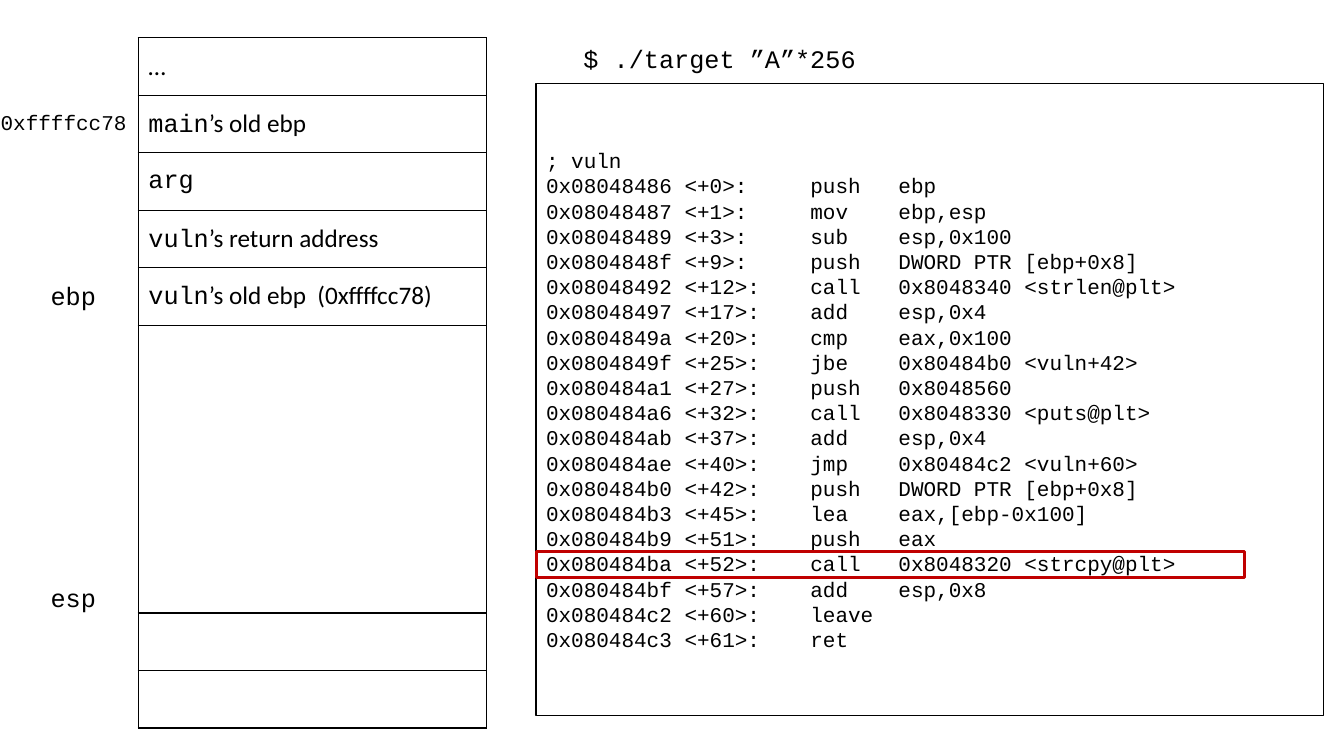
from lxml import etree
from pptx import Presentation
from pptx.dml.color import RGBColor
from pptx.enum import shapes, text
from pptx.oxml.ns import qn
from pptx.util import Pt

MONO, SANS = "Courier New", "Calibri"
BLACK, WHITE, RED = "000000", "FFFFFF", "C00000"
ROW = 41.1
START = 0x08048486
CODE = [
    (0, "push", "ebp"),
    (1, "mov", "ebp,esp"),
    (3, "sub", "esp,0x100"),
    (9, "push", "DWORD PTR [ebp+0x8]"),
    (12, "call", "0x8048340 <strlen@plt>"),
    (17, "add", "esp,0x4"),
    (20, "cmp", "eax,0x100"),
    (25, "jbe", "0x80484b0 <vuln+42>"),
    (27, "push", "0x8048560"),
    (32, "call", "0x8048330 <puts@plt>"),
    (37, "add", "esp,0x4"),
    (40, "jmp", "0x80484c2 <vuln+60>"),
    (42, "push", "DWORD PTR [ebp+0x8]"),
    (45, "lea", "eax,[ebp-0x100]"),
    (51, "push", "eax"),
    (52, "call", "0x8048320 <strcpy@plt>"),
    (57, "add", "esp,0x8"),
    (60, "leave", ""),
    (61, "ret", ""),
]
STACK = [
    (1, [("…", SANS)]),
    (1, [("main", MONO), ("’s old ebp", SANS)]),
    (1, [("arg", MONO)]),
    (1, [("vuln", MONO), ("’s return address", SANS)]),
    (1, [("vuln", MONO), ("’s old ebp  (0xffffcc78)", SANS)]),
    (5, []),
    (1, []),
    (1, []),
]


def color(code):
    return RGBColor.from_string(code)


def style(run, size, face=MONO):
    run.font.size = Pt(size)
    run.font.name = face
    run.font.color.rgb = color(BLACK)


def box(slide, area, line, width, fill=None):
    rect = slide.shapes.add_shape(shapes.MSO_SHAPE.RECTANGLE, *map(Pt, area))
    rect.shadow.inherit = False
    if fill:
        rect.fill.solid()
        rect.fill.fore_color.rgb = color(fill)
    else:
        rect.fill.background()
    rect.line.color.rgb = color(line)
    rect.line.width = Pt(width)
    return rect


def listing(slide, area):
    frame = box(slide, area, BLACK, 1, WHITE).text_frame
    frame.word_wrap = True
    frame.vertical_anchor = text.MSO_ANCHOR.MIDDLE
    lines = ["; vuln"]
    for step, verb, args in CODE:
        place = f"0x{START + step:08x} <+{step}>:"
        lines.append(f"{place:<21}{verb:<7}{args}".rstrip())
    frame.text = "\n".join(lines)
    for para in frame.paragraphs:
        para.alignment = text.PP_ALIGN.LEFT
        style(para.runs[0], 15)


def border(cell):
    props = cell._tc.get_or_add_tcPr()
    for spot, side in enumerate(("lnL", "lnR", "lnT", "lnB")):
        line = etree.Element(qn(f"a:{side}"), w=str(Pt(1)))
        fill = etree.SubElement(line, qn("a:solidFill"))
        etree.SubElement(fill, qn("a:srgbClr"), val=BLACK)
        props.insert(spot, line)


def stack(slide, left, top, width):
    total = ROW * sum(span for span, _ in STACK)
    area = map(Pt, (left, top, width, total))
    table = slide.shapes.add_table(len(STACK), 1, *area).table
    table.first_row = table.horz_banding = False
    for index, (span, parts) in enumerate(STACK):
        table.rows[index].height = Pt(ROW * span)
        cell = table.cell(index, 0)
        cell.fill.solid()
        cell.fill.fore_color.rgb = color(WHITE)
        cell.vertical_anchor = text.MSO_ANCHOR.MIDDLE
        border(cell)
        para = cell.text_frame.paragraphs[0]
        for words, face in parts:
            run = para.add_run()
            run.text = words
            style(run, 18, face)


def label(slide, words, area, size=18, center=True):
    frame = slide.shapes.add_textbox(*map(Pt, area)).text_frame
    frame.word_wrap = center
    frame.auto_size = text.MSO_AUTO_SIZE.SHAPE_TO_FIT_TEXT
    frame.text = words
    para = frame.paragraphs[0]
    para.alignment = text.PP_ALIGN.CENTER if center else text.PP_ALIGN.LEFT
    style(para.runs[0], size)


def main():
    deck = Presentation()
    deck.slide_width, deck.slide_height = Pt(960), Pt(540)
    slide = deck.slides.add_slide(deck.slide_layouts[6])
    listing(slide, (383, 59.8, 562.5, 451.4))
    stack(slide, 98.8, 27, 249)
    box(slide, (383, 393.8, 506.2, 18.7), RED, 2)
    label(slide, "esp", (23.8, 412.6, 57, 29))
    label(slide, "ebp", (23.8, 196.6, 57, 29))
    label(slide, "0xffffcc78", (-17, 75, 125, 25), 15)
    label(slide, "$ ./target ”A”*256", (409.7, 27.4, 210, 29), center=False)
    deck.save("out.pptx")


if __name__ == "__main__":
    main()
